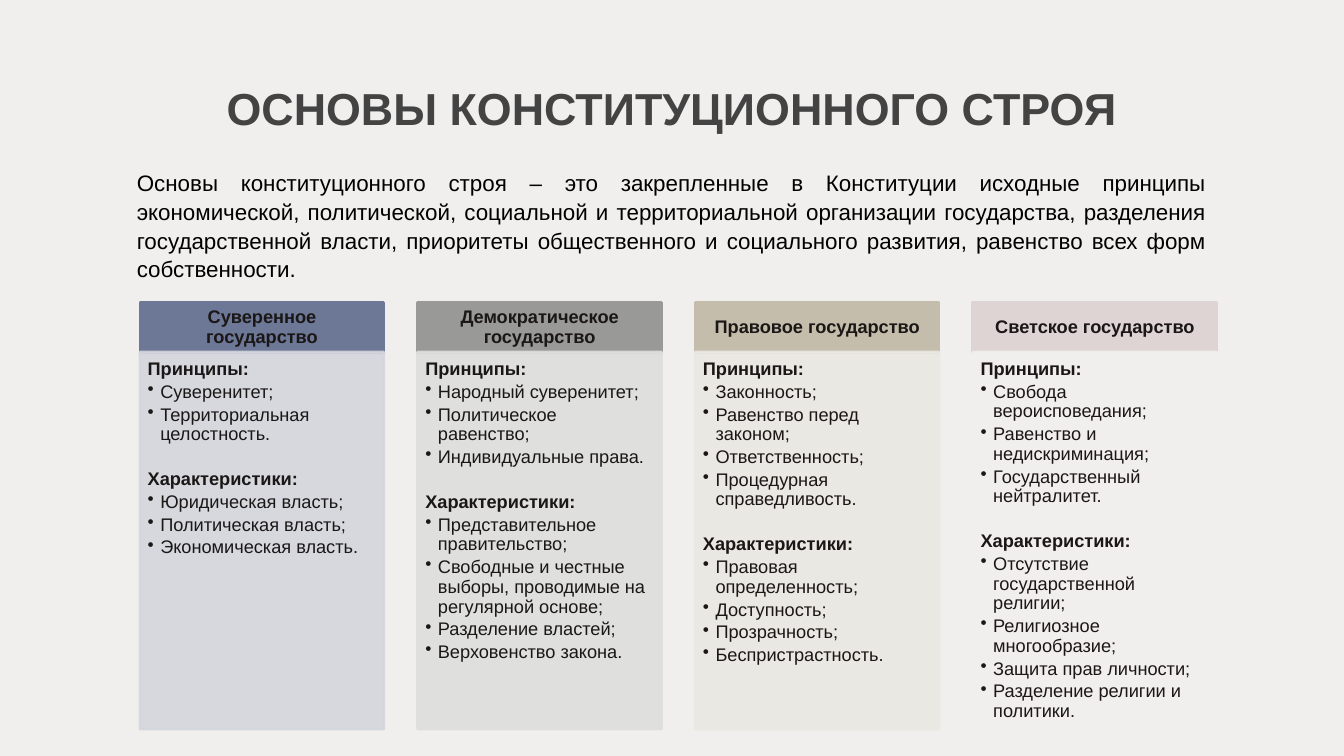
from lxml import etree
from pptx import Presentation
from pptx.dml.color import RGBColor
from pptx.enum.shapes import MSO_SHAPE
from pptx.enum.text import MSO_ANCHOR as ANCHOR, PP_ALIGN as ALIGN
from pptx.oxml.ns import qn
from pptx.util import Pt

TITLE = "ОСНОВЫ КОНСТИТУЦИОННОГО СТРОЯ"
INTRO = (
    "Основы конституционного строя – это закрепленные в Конституции исходные принципы "
    "экономической, политической, социальной и территориальной организации государства, "
    "разделения государственной власти, приоритеты общественного и социального развития, "
    "равенство всех форм собственности."
)
SECTIONS = ("Принципы:", "Характеристики:")
STATES = [
    ("Суверенное государство", "6D7897", "D4D6DD",
     ["Суверенитет;", "Территориальная целостность."],
     ["Юридическая власть;", "Политическая власть;", "Экономическая власть."]),
    ("Демократическое государство", "999998", "DEDEDD",
     ["Народный суверенитет;", "Политическое равенство;", "Индивидуальные права."],
     ["Представительное правительство;",
      "Свободные и честные выборы, проводимые на регулярной основе;",
      "Разделение властей;", "Верховенство закона."]),
    ("Правовое государство", "C4BDAB", "EAE8E2",
     ["Законность;", "Равенство перед законом;", "Ответственность;",
      "Процедурная справедливость."],
     ["Правовая определенность;", "Доступность;", "Прозрачность;", "Беспристрастность."]),
    ("Светское государство", "DDD4D3", "F2EFEF",
     ["Свобода вероисповедания;", "Равенство и недискриминация;",
      "Государственный нейтралитет."],
     ["Отсутствие государственной религии;", "Религиозное многообразие;",
      "Защита прав личности;", "Разделение религии и политики."]),
]

BACKGROUND, TITLE_COLOR, INTRO_COLOR, CARD_TEXT = "F1EFEE", "434343", "000000", "1A1716"
CARD_LEFT, CARD_PITCH, CARD_WIDTH = 100, 198.3, 174.2
HEADER_TOP, HEADER_HEIGHT = 216, 35.7
BODY_TOP, BODY_HEIGHT = 251.5, 269.3
INDENT, SECTION_GAP = 9, 15.8

TITLE_FONT = {"size": Pt(32), "bold": True}
INTRO_FONT = {"size": Pt(16), "bold": False}
STRONG_FONT = {"size": Pt(13), "bold": True}
ITEM_FONT = {"size": Pt(13), "bold": False}
INTRO_FORMAT = {"alignment": ALIGN.JUSTIFY, "line_spacing": 1.07, "space_after": Pt(10.7)}
HEADER_FORMAT = {"alignment": ALIGN.CENTER, "line_spacing": 0.9}
BODY_FORMAT = {"alignment": ALIGN.LEFT, "line_spacing": 0.9, "space_after": Pt(2.2)}


def rgb(color):
    return RGBColor.from_string(color)


def apply(target, values):
    for name, value in values.items():
        setattr(target, name, value)


def set_frame(shape, margins, anchor):
    frame = shape.text_frame
    sides = ("margin_left", "margin_top", "margin_right", "margin_bottom")
    apply(frame, {side: Pt(margin) for side, margin in zip(sides, margins)})
    apply(frame, {"word_wrap": True, "vertical_anchor": anchor})
    return frame


def write(paragraph, text, font, color, layout):
    run = paragraph.add_run()
    run.text = text
    run.font.name = "Arial"
    run.font.color.rgb = rgb(color)
    apply(run.font, font)
    apply(paragraph, layout)


def add_text(slide, box, text, font, color, layout, margins, anchor):
    shape = slide.shapes.add_textbox(*map(Pt, box))
    frame = set_frame(shape, margins, anchor)
    write(frame.paragraphs[0], text, font, color, layout)


def add_panel(slide, box, color, opacity=100):
    shape = slide.shapes.add_shape(MSO_SHAPE.RECTANGLE, *map(Pt, box))
    shape.shadow.inherit = False
    shape.fill.solid()
    shape.fill.fore_color.rgb = rgb(color)
    shape.line.color.rgb = rgb(color)
    shape.line.width = Pt(2)
    if opacity < 100:
        for node in shape.element.spPr.iter(qn("a:srgbClr")):
            etree.SubElement(node, qn("a:alpha"), val=str(opacity * 1000))
    return shape


def set_indent(paragraph, bullet):
    properties = paragraph._p.get_or_add_pPr()
    properties.set("marL", str(Pt(INDENT)))
    properties.set("indent", str(-Pt(INDENT)))
    if bullet:
        etree.SubElement(properties, qn("a:buChar"), char="•")
    else:
        etree.SubElement(properties, qn("a:buNone"))


def add_card(slide, left, name, header_color, body_color, *lists):
    header = add_panel(slide, (left, HEADER_TOP, CARD_WIDTH, HEADER_HEIGHT), header_color)
    frame = set_frame(header, (7, 4, 7, 4), ANCHOR.MIDDLE)
    write(frame.paragraphs[0], name, STRONG_FONT, CARD_TEXT, HEADER_FORMAT)

    body = add_panel(slide, (left, BODY_TOP, CARD_WIDTH, BODY_HEIGHT), body_color, 90)
    frame = set_frame(body, (5.5, 5.5, 7, 8), ANCHOR.TOP)
    paragraph = frame.paragraphs[0]
    for index, (section, items) in enumerate(zip(SECTIONS, lists)):
        if index:
            paragraph = frame.add_paragraph()
            paragraph.space_before = Pt(SECTION_GAP)
        write(paragraph, section, STRONG_FONT, CARD_TEXT, BODY_FORMAT)
        set_indent(paragraph, False)
        for item in items:
            paragraph = frame.add_paragraph()
            write(paragraph, item, ITEM_FONT, CARD_TEXT, BODY_FORMAT)
            set_indent(paragraph, True)


def main():
    presentation = Presentation()
    apply(presentation, {"slide_width": Pt(960), "slide_height": Pt(540)})
    slide = presentation.slides.add_slide(presentation.slide_layouts[6])
    slide.background.fill.solid()
    slide.background.fill.fore_color.rgb = rgb(BACKGROUND)

    add_text(slide, (75.6, 46.8, 808.6, 60.5), TITLE, TITLE_FONT, TITLE_COLOR,
             {"alignment": ALIGN.CENTER}, (9, 9, 9, 9), ANCHOR.MIDDLE)
    add_text(slide, (90.7, 116, 778, 90), INTRO, INTRO_FONT, INTRO_COLOR,
             INTRO_FORMAT, (7.2, 3.6, 7.2, 3.6), ANCHOR.TOP)
    for index, state in enumerate(STATES):
        add_card(slide, CARD_LEFT + index * CARD_PITCH, *state)
    presentation.save("out.pptx")


if __name__ == "__main__":
    main()
